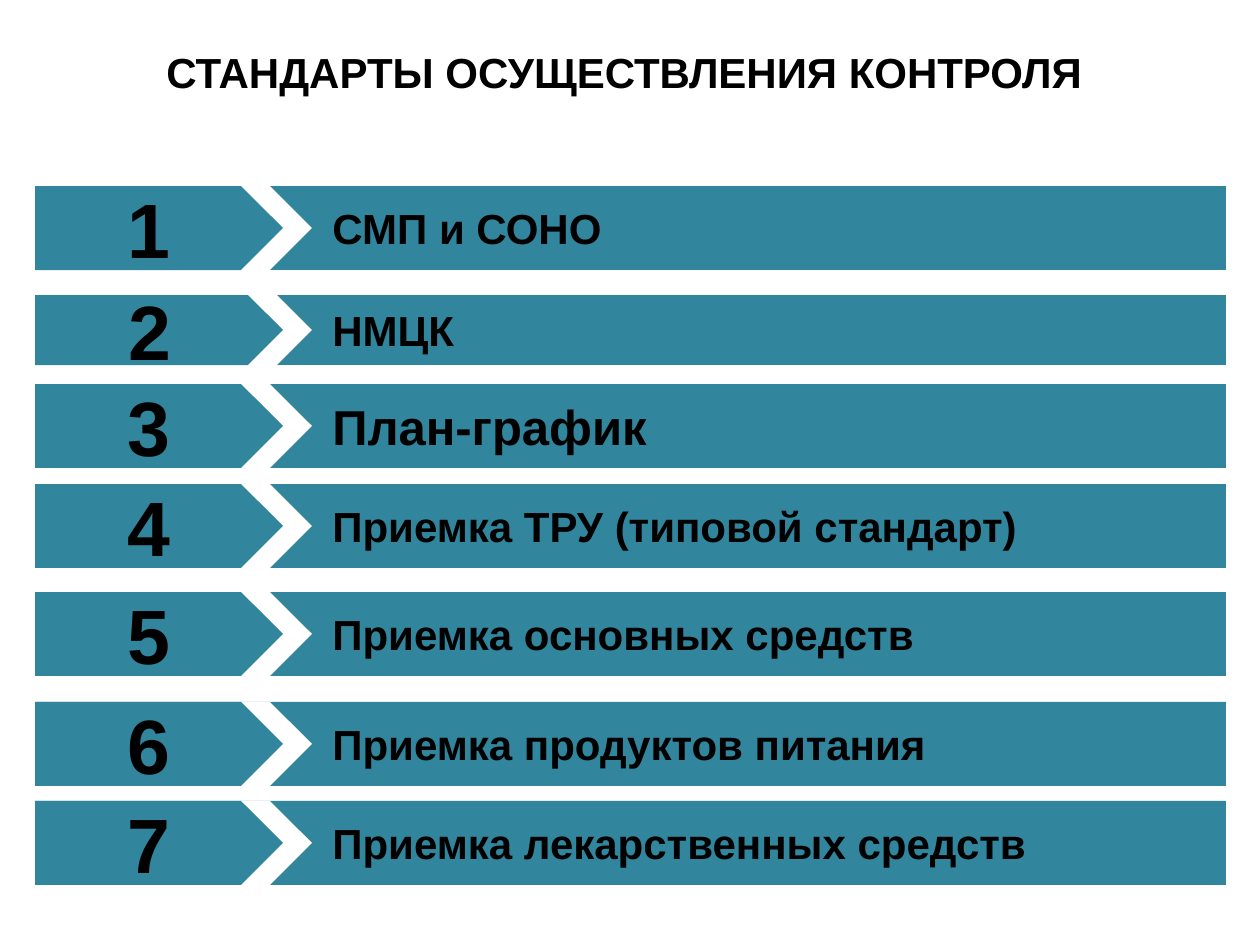
from pptx import Presentation
from pptx import util as u
from pptx.dml.color import RGBColor
from pptx.enum import shapes, text

PX = u.Inches(1) / 126
HUES = {"bar": "31859C", "gap": "FFFFFF", "ink": "000000"}
LEFT, BAR, GAP, TAG = 35, 1191, 277, 248
INDENT = 285
TITLE = "СТАНДАРТЫ ОСУЩЕСТВЛЕНИЯ КОНТРОЛЯ "
# top, height, label, label size
ROWS = [
    (186, 84, "СМП и СОНО", 24),
    (295, 70, "НМЦК", 24),
    (384, 84, "План-график", 28),
    (484, 84, "Приемка ТРУ (типовой стандарт)", 24),
    (592, 84, "Приемка основных средств", 24),
    (702, 84, "Приемка продуктов питания", 24),
    (801, 84, "Приемка лекарственных средств", 24),
]


def px(n):
    return u.Emu(round(n * PX))


def hue(name):
    return RGBColor.from_string(HUES[name])


def write(shape, words, size, align, anchor):
    frame = shape.text_frame
    frame.word_wrap = True
    frame.vertical_anchor = anchor
    para = frame.paragraphs[0]
    para.alignment = align
    run = para.add_run()
    run.text = words
    form = {"name": "Arial", "size": u.Pt(size), "bold": True}
    for key, val in form.items():
        setattr(run.font, key, val)
    run.font.color.rgb = hue("ink")
    return para


def block(group, kind, top, width, height, fill):
    shape = group.shapes.add_shape(kind, px(LEFT), px(top), px(width), px(height))
    shape.shadow.inherit = False
    shape.fill.solid()
    shape.fill.fore_color.rgb = hue(fill)
    shape.line.fill.background()
    return shape


def row(slide, num, top, height, label, size):
    """Group a labelled bar, a white arrow and a numbered arrow."""
    kinds = shapes.MSO_SHAPE
    middle = text.MSO_ANCHOR.MIDDLE
    group = slide.shapes.add_group_shape()
    bar = block(group, kinds.RECTANGLE, top, BAR, height, "bar")
    para = write(bar, label, size, text.PP_ALIGN.LEFT, middle)
    para._p.get_or_add_pPr().set("marL", str(px(INDENT)))
    block(group, kinds.PENTAGON, top, GAP, height, "gap")
    tag = block(group, kinds.PENTAGON, top, TAG, height, "bar")
    write(tag, str(num), 44, text.PP_ALIGN.CENTER, middle)


def head(slide):
    title = slide.shapes.title
    place = {"left": 0, "top": 40, "width": 1260, "height": 63}
    for key, val in place.items():
        setattr(title, key, px(val))
    write(title, TITLE, 24, text.PP_ALIGN.CENTER, text.MSO_ANCHOR.TOP)
    title.text_frame.auto_size = text.MSO_AUTO_SIZE.SHAPE_TO_FIT_TEXT


def main():
    deck = Presentation()
    deck.slide_width, deck.slide_height = px(1260), px(945)
    slide = deck.slides.add_slide(deck.slide_layouts[5])
    head(slide)
    for num, item in enumerate(ROWS, 1):
        row(slide, num, *item)
    deck.save("out.pptx")


if __name__ == "__main__":
    main()
